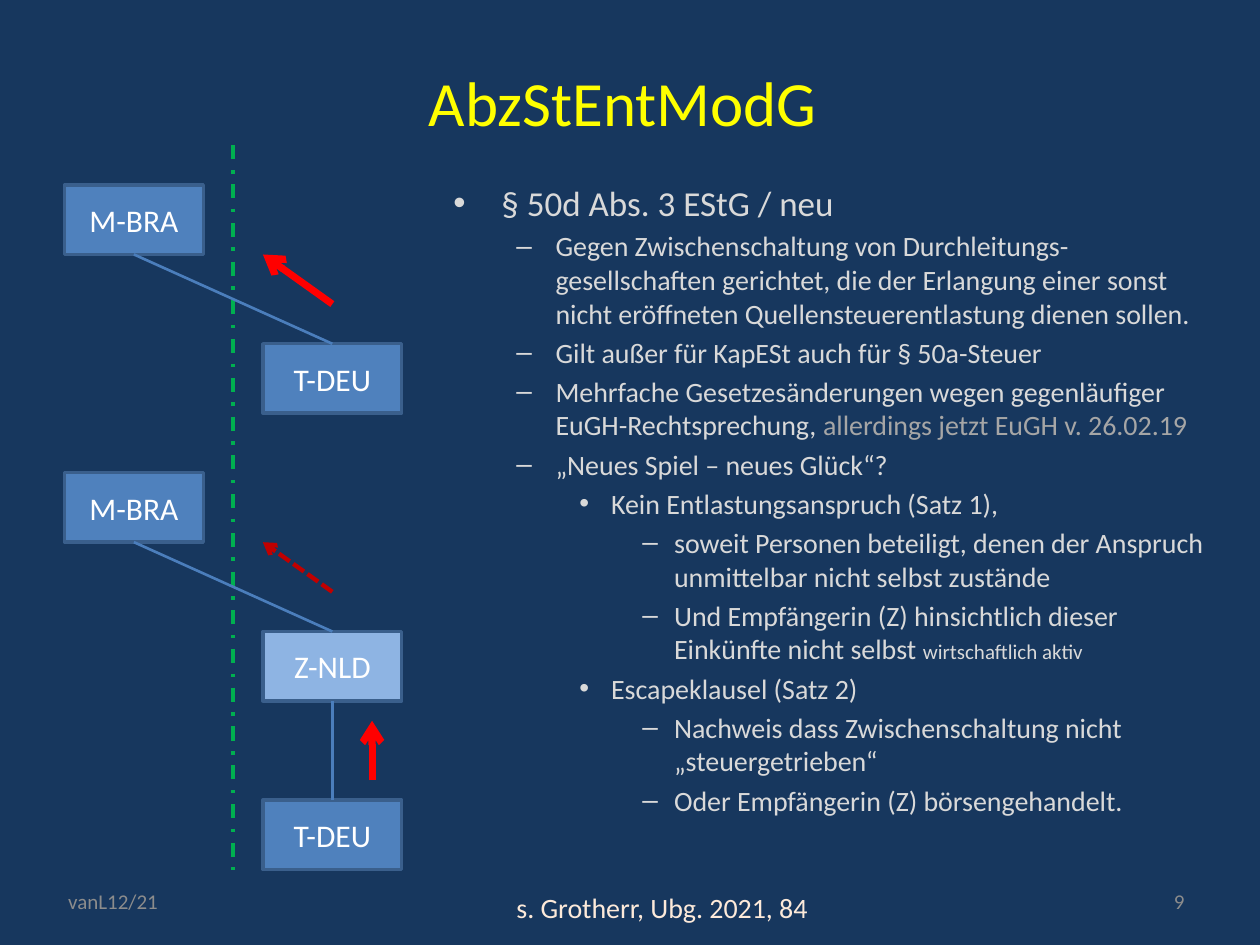
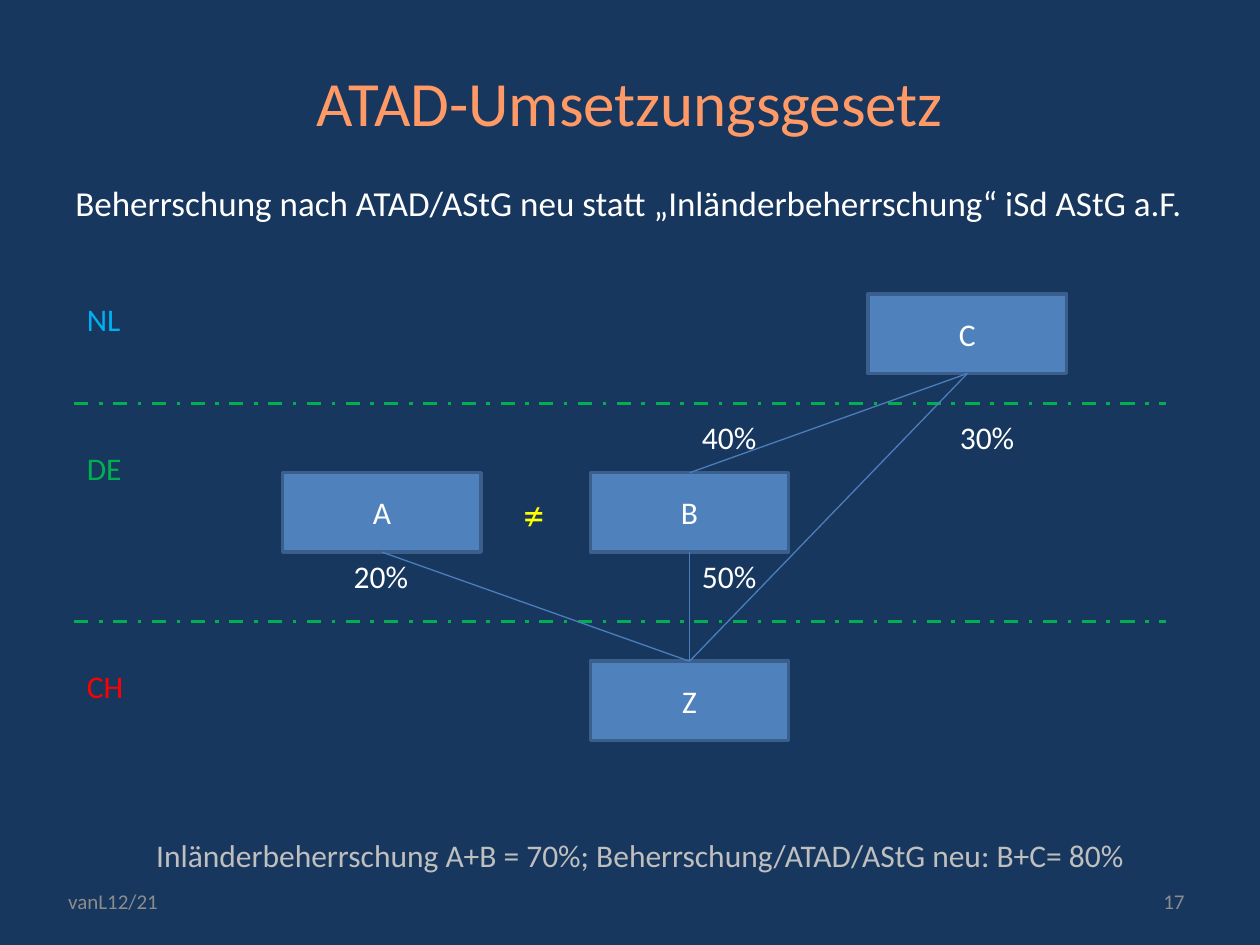
from dataclasses import dataclass

from lxml.etree import SubElement
from pptx import Presentation
from pptx.dml.color import RGBColor
from pptx.enum.dml import MSO_LINE as Dash
from pptx.enum.shapes import MSO_CONNECTOR as Wire, MSO_SHAPE as Form
from pptx.enum.text import MSO_ANCHOR as Anchor, MSO_AUTO_SIZE as Fit, PP_ALIGN as Align
from pptx.oxml.ns import qn
from pptx.util import Cm, Pt


@dataclass(frozen=True)
class Theme:
    """Colours, font and type sizes of the deck."""
    font: str = "Calibri"
    back: str = "17375E"
    white: str = "FFFFFF"
    text: str = "D9D9D9"
    dim: str = "A6A6A6"
    sum: str = "BFBFBF"
    foot: str = "8C8C8C"
    cream: str = "FDEADA"
    yellow: str = "FFFF00"
    orange: str = "FF9966"
    box: str = "4F81BD"
    light: str = "8EB4E3"
    edge: str = "3A5F8C"
    link: str = "4B7EBC"
    green: str = "00B050"
    sky: str = "00B0F0"
    red: str = "FF0000"
    dark: str = "C00000"
    title: int = 36
    sign: int = 24
    lead: int = 20
    label: int = 18
    body: int = 16
    small: int = 12


T = Theme()

LEVELS = [(0.97, 0.97, "•"), (2.06, 0.79, "–"), (3.18, 0.64, "•"), (4.45, 0.64, "–")]

POINTS = [
    (0, "§ 50d Abs. 3 EStG / neu"),
    (1, "Gegen Zwischenschaltung von Durchleitungs-gesellschaften gerichtet, die der "
        "Erlangung einer sonst nicht eröffneten Quellensteuerentlastung dienen sollen."),
    (1, "Gilt außer für KapESt auch für § 50a-Steuer"),
    (1, "Mehrfache Gesetzesänderungen wegen gegenläufiger EuGH-Rechtsprechung, ",
     ("allerdings jetzt EuGH v. 26.02.19", T.body, T.dim)),
    (1, "„Neues Spiel – neues Glück“?"),
    (2, "Kein Entlastungsanspruch (Satz 1),"),
    (3, "soweit Personen beteiligt, denen der Anspruch unmittelbar nicht selbst zustände"),
    (3, "Und Empfängerin (Z) hinsichtlich dieser Einkünfte nicht selbst ",
     ("wirtschaftlich aktiv", T.small, T.text)),
    (2, "Escapeklausel (Satz 2)"),
    (3, "Nachweis dass Zwischenschaltung nicht „steuergetrieben“"),
    (3, "Oder Empfängerin (Z) börsengehandelt."),
]


def style(font, size, tint):
    """Set typeface, size and colour of a font."""
    font.name, font.size = T.font, Pt(size)
    font.color.rgb = RGBColor.from_string(tint)


def place(shape, x, y, wide, high):
    """Move and size a shape, in centimetres."""
    shape.left, shape.top, shape.width, shape.height = map(Cm, (x, y, wide, high))


def note(slide, text, area, size, tint, align=Align.LEFT, anchor=Anchor.TOP):
    """Add one unwrapped line of text."""
    frame = slide.shapes.add_textbox(*map(Cm, area)).text_frame
    frame.word_wrap, frame.vertical_anchor = False, anchor
    para = frame.paragraphs[0]
    para.text, para.alignment = text, align
    style(para.font, size, tint)


def start(deck, title, tint, page):
    """Add a slide with its title and footers."""
    slide = deck.slides.add_slide(deck.slide_layouts[5])
    head = slide.shapes.title
    place(head, 1.27, 0.76, 22.86, 2.57)
    frame = head.text_frame
    frame.text = title
    frame.auto_size, frame.vertical_anchor = Fit.NONE, Anchor.MIDDLE
    para = frame.paragraphs[0]
    para.alignment = Align.CENTER
    style(para.font, T.title, tint)
    note(slide, "vanL12/21", (0.28, 17.65, 4, 1.02), T.small, T.foot,
         Align.CENTER, Anchor.MIDDLE)
    note(slide, page, (18.2, 17.65, 5.93, 1.02), T.small, T.foot,
         Align.RIGHT, Anchor.MIDDLE)
    return slide


def node(slide, text, area, fill=T.box):
    """Add a company box."""
    box = slide.shapes.add_shape(Form.RECTANGLE, *map(Cm, area))
    box.shadow.inherit = False
    box.fill.solid()
    box.fill.fore_color.rgb = RGBColor.from_string(fill)
    box.line.color.rgb = RGBColor.from_string(T.edge)
    box.line.width = Pt(2)
    frame = box.text_frame
    frame.vertical_anchor = Anchor.MIDDLE
    para = frame.paragraphs[0]
    para.text, para.alignment = text, Align.CENTER
    style(para.font, T.label, T.white)
    return box


def stroke(slide, ends, tint, width, dash=None, arrow=False):
    """Add a straight line, with an arrowhead if asked."""
    line = slide.shapes.add_connector(Wire.STRAIGHT, *map(Cm, ends))
    line.line.color.rgb = RGBColor.from_string(tint)
    line.line.width = Pt(width)
    if dash:
        line.line.dash_style = dash
    props = line._element.spPr
    if arrow:
        SubElement(props.find(qn("a:ln")), qn("a:tailEnd"), type="arrow")
    SubElement(props, qn("a:effectLst"))
    return line


def link(slide, upper, lower, width):
    """Join the bottom of one box to the top of another."""
    line = stroke(slide, (0, 0, 1, 1), T.link, width)
    line.begin_connect(upper, 2)
    line.end_connect(lower, 0)


def border(slide, *ends):
    """Add a dash-dotted state border."""
    stroke(slide, ends, T.green, 2, Dash.DASH_DOT)


def indent(para, left, hang=0, mark=None):
    """Set the indent and bullet of a paragraph."""
    props = para._p.get_or_add_pPr()
    props.set("marL", str(Cm(left)))
    props.set("indent", str(-Cm(hang)))
    if mark:
        SubElement(props, qn("a:buFont"), typeface="Arial")
        SubElement(props, qn("a:buChar"), char=mark)


def outline(slide, points, source):
    """Add the bulleted text and its source line."""
    frame = slide.shapes.add_textbox(*map(Cm, (8.89, 3.53, 15.8, 15.5))).text_frame
    frame.word_wrap = True
    para = frame.paragraphs[0]
    for level, text, *extra in points:
        para.text, para.level = text, level
        indent(para, *LEVELS[level])
        para.space_before = Pt(3.2)
        style(para.font, T.body if level else T.lead, T.text)
        for more, size, tint in extra:
            run = para.add_run()
            run.text = more
            style(run.font, size, tint)
        para = frame.add_paragraph()
    para.text, para.level = source, 1
    indent(para, 1.27)
    para.space_before = Pt(42)
    style(para.font, T.body, T.cream)


def relief(deck):
    """Build the slide on withholding tax relief."""
    slide = start(deck, "AbzStEntModG ", T.yellow, "9")
    outline(slide, POINTS, "s. Grotherr, Ubg. 2021, 84")
    left, right, wide, high = 1.3, 5.3, 2.8, 1.4
    mid = right + wide / 2
    border(slide, 4.7, 2.93, 4.7, 17.53)
    cases = [(3.73, "T-DEU", T.box, (T.red, 4)),
             (9.53, "Z-NLD", T.light, (T.dark, 2.5, Dash.SQUARE_DOT))]
    for top, name, fill, look in cases:
        parent = node(slide, "M-BRA", (left, top, wide, high))
        child = node(slide, name, (right, top + 3.2, wide, high), fill)
        link(slide, parent, child, 1.5)
        stroke(slide, (mid, top + 2.4, right, top + high), *look, arrow=True)
    base = node(slide, "T-DEU", (right, 16.13, wide, high))
    link(slide, child, base, 1.5)
    stroke(slide, (7.5, 15.73, 7.5, 14.53), T.red, 4, arrow=True)


def control(deck):
    """Build the slide on the control test."""
    slide = start(deck, "ATAD-Umsetzungsgesetz", T.orange, "17")
    note(slide, "Beherrschung nach ATAD/AStG neu statt „Inländerbeherrschung“ iSd AStG a.F.",
         (1.27, 3.53, 22.86, 1.2), T.lead, T.white)
    for y in (8.13, 12.53):
        border(slide, 1.5, y, 23.5, y)
    for name, y, tint in (("NL", 5.93, T.sky), ("DE", 8.93, T.green), ("CH", 13.33, T.red)):
        note(slide, name, (1.5, y, 2, 1.03), T.label, tint)
    spots = {"A": (5.7, 9.53), "B": (11.9, 9.53), "C": (17.5, 5.93), "Z": (11.9, 13.33)}
    boxes = {name: node(slide, name, (*spot, 4, 1.6)) for name, spot in spots.items()}
    for upper, lower in ("CB", "BZ", "CZ", "AZ"):
        link(slide, boxes[upper], boxes[lower], 0.75)
    note(slide, "≠", (10.3, 9.73, 1.2, 1.28), T.sign, T.yellow)
    shares = [("40%", 13.9, 8.3), ("30%", 19.1, 8.3), ("50%", 13.9, 11.1), ("20%", 6.88, 11.1)]
    for share, x, y in shares:
        note(slide, share, (x, y, 2, 1.03), T.label, T.white)
    note(slide, "Inländerbeherrschung A+B = 70%; Beherrschung/ATAD/AStG neu: B+C= 80%",
         (2.9, 16.72, 20.5, 1.03), T.label, T.sum)


def main():
    """Build and save the deck."""
    deck = Presentation()
    deck.slide_width, deck.slide_height = Cm(25.4), Cm(19.05)
    fill = deck.slide_master.background.fill
    fill.solid()
    fill.fore_color.rgb = RGBColor.from_string(T.back)
    relief(deck)
    control(deck)
    deck.save("out.pptx")


if __name__ == "__main__":
    main()
